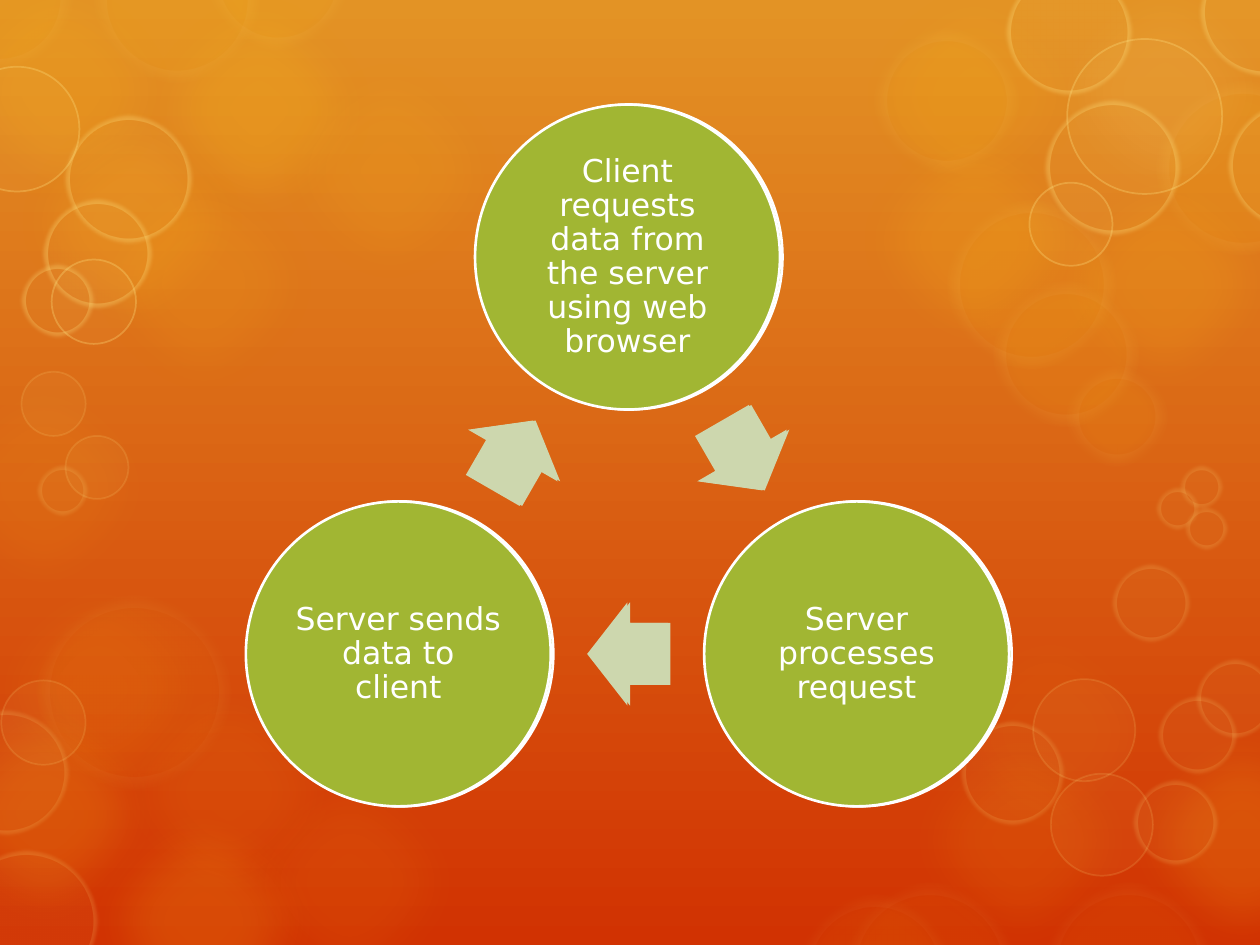
from dataclasses import dataclass
from math import cos, radians, sin

from lxml import etree
from pptx import Presentation
from pptx import util as u
from pptx.dml.color import RGBColor
from pptx.enum import shapes, text
from pptx.oxml import ns

GOLD = RGBColor(0xFD, 0xC6, 0x1B)
PALE = RGBColor(0xFF, 0xE2, 0x81)
CREAM = RGBColor(0xFE, 0xEB, 0xAE)
ORANGE = RGBColor(0xE3, 0x93, 0x25)
RED = RGBColor(0xD1, 0x32, 0x02)
GREEN = RGBColor(0xA1, 0xB6, 0x33)
SAGE = RGBColor(0xCD, 0xD7, 0xAE)
WHITE = RGBColor(0xFF, 0xFF, 0xFF)

FONT = "DejaVu Sans"
WIDTH, HEIGHT = 10, 7.5
GLOW_SIZE = 2.09

CYCLE_CENTERS = (5.0, 4.98)
CYCLE_MIDDLE = 4.14
CYCLE_RADIUS = 2.1
NODE_SIZE = 2.42
ARROW_WIDTH, ARROW_HEIGHT = 0.64, 0.82
STEPS = (
    "Client requests data from the server using web browser",
    "Server processes request",
    "Server sends data to client",
)


@dataclass(frozen=True)
class Bubble:
    left: float
    top: float
    size: float


@dataclass(frozen=True)
class Style:
    fill: RGBColor
    alpha: int
    soft: float = 0
    line: RGBColor | None = None
    width: float = 0
    line_alpha: int = 0


def glow(color: RGBColor, alpha: int) -> Style:
    return Style(color, alpha, 25)


def ring(width: float, line_alpha: int, soft: float = 0) -> Style:
    return Style(PALE, 5, soft, PALE, width, line_alpha)


def glows(*corners: tuple[float, float]) -> list[Bubble]:
    return [Bubble(x, y, GLOW_SIZE) for x, y in corners]


def bubbles(*rows: tuple[float, float, float]) -> list[Bubble]:
    return [Bubble(*row) for row in rows]


BACKDROP = (
    (glow(GOLD, 5), glows((7.29, 4.77))),
    (glow(GOLD, 8), glows((-0.26, 4.42), (0.77, 5.24), (1.73, 5.96), (-0.7, 2.82))),
    (glow(GOLD, 10), glows((0.57, 1.2), (2.05, 0.31), (6.69, -0.29), (7.06, 5.62))),
    (glow(GOLD, 14), glows((-0.56, -0.32))),
    (glow(GOLD, 15), glows((0, 0.72), (8.2, 1.2), (6.69, 0.86))),
    (glow(GOLD, 16), glows((0.57, 6.27), (8.81, 5.62), (-0.69, 5.41))),
    (glow(GOLD, 20), glows((1.01, -0.18))),
    (glow(PALE, 10), glows((8.2, -0.32))),
    (Style(GOLD, 10, 9, CREAM, 14, 6), bubbles(
        (9.18, 0.65, 1.37), (6.94, 0.23, 1.14), (7.52, 1.59, 1.33),
        (7.89, 2.24, 1.14), (8.47, 2.91, 0.79), (0.75, -0.66, 1.31),
        (1.64, -0.74, 1.13), (-0.57, -0.58, 1.14))),
    (Style(GOLD, 6, 9, CREAM, 14, 4), bubbles(
        (0.3, 4.73, 1.53), (6.33, 7.1, 1.23), (6.7, 7.01, 1.36),
        (8.29, 7.01, 1.33))),
    (ring(1, 15), bubbles(
        (0.01, 5.4, 0.67), (8.34, 6.14, 0.81), (8.2, 5.39, 0.81),
        (0.17, 2.95, 0.51), (0.52, 3.46, 0.5))),
    (ring(1, 30), bubbles(
        (-0.36, 0.53, 0.99), (0.41, 2.06, 0.67), (8.47, 0.31, 1.23),
        (8.17, 1.45, 0.66))),
    (ring(5, 15, 2.5), bubbles(
        (-0.35, 6.75, 1.12), (-0.44, 5.64, 0.98), (7.63, 5.73, 0.81),
        (9, 6.2, 0.66), (8.83, 4.48, 0.61), (9.2, 5.53, 0.61),
        (9.5, 5.24, 0.61), (9.37, 3.7, 0.33), (9.18, 3.87, 0.33),
        (9.41, 4.03, 0.33), (0.3, 3.7, 0.39))),
    (ring(5, 30, 2.5), bubbles(
        (0.52, 0.92, 1), (0.35, 1.59, 0.85), (0.17, 2.1, 0.57),
        (7.99, -0.24, 0.99), (9.53, -0.4, 1), (9.75, 0.82, 0.99),
        (8.3, 0.8, 1.06))),
)


def cm(inches: float) -> u.Length:
    return u.Cm(inches * 2.54)


def set_alpha(fill, percent: int) -> None:
    color = fill.find(".//" + ns.qn("a:srgbClr"))
    etree.SubElement(color, ns.qn("a:alpha"), val=str(percent * 1000))


def add_block(parent, kind, x: float, y: float, w: float, h: float, color: RGBColor):
    sp = parent.shapes.add_shape(kind, cm(x), cm(y), cm(w), cm(h))
    sp.shadow.inherit = False
    sp.fill.solid()
    sp.fill.fore_color.rgb = color
    sp.line.fill.background()
    return sp


def add_bubble(s, b: Bubble, style: Style) -> None:
    sp = add_block(s, shapes.MSO_SHAPE.OVAL, b.left, b.top, b.size, b.size, style.fill)
    spPr = sp._element.spPr
    set_alpha(spPr.find(ns.qn("a:solidFill")), style.alpha)
    if style.line is not None:
        sp.line.color.rgb = style.line
        sp.line.width = u.Pt(style.width)
        set_alpha(spPr.find(ns.qn("a:ln")), style.line_alpha)
    if style.soft:
        etree.SubElement(spPr.find(ns.qn("a:effectLst")), ns.qn("a:softEdge"),
                         rad=str(int(u.Pt(style.soft))))


def write(sp, words: str, *, size: float, color: RGBColor, font: str = FONT) -> None:
    tf = sp.text_frame
    tf.word_wrap = True
    tf.vertical_anchor = text.MSO_ANCHOR.MIDDLE
    tf.margin_left = tf.margin_right = tf.margin_top = tf.margin_bottom = cm(0.03)
    p = tf.paragraphs[0]
    p.alignment = text.PP_ALIGN.CENTER
    p.line_spacing = 0.9
    r = p.add_run()
    r.text = words
    r.font.size = u.Pt(size)
    r.font.name = font
    r.font.color.rgb = color


def add_cycle(s, center: float) -> None:
    group = s.shapes.add_group_shape()
    turn = 360 / len(STEPS)
    reach = CYCLE_RADIUS * cos(radians(turn / 2))
    for i, step in enumerate(STEPS):
        a = radians(i * turn - 90)
        node = add_block(group, shapes.MSO_SHAPE.OVAL,
                         center + CYCLE_RADIUS * cos(a) - NODE_SIZE / 2,
                         CYCLE_MIDDLE + CYCLE_RADIUS * sin(a) - NODE_SIZE / 2,
                         NODE_SIZE, NODE_SIZE, GREEN)
        node.line.color.rgb = WHITE
        node.line.width = u.Pt(1.5)
        write(node, step, size=18, color=WHITE)

        a += radians(turn / 2)
        arrow = add_block(group, shapes.MSO_SHAPE.RIGHT_ARROW,
                          center + reach * cos(a) - ARROW_WIDTH / 2,
                          CYCLE_MIDDLE + reach * sin(a) - ARROW_HEIGHT / 2,
                          ARROW_WIDTH, ARROW_HEIGHT, SAGE)
        arrow.adjustments[0] = 0.6
        arrow.adjustments[1] = 0.5
        arrow.rotation = turn / 2 + i * turn


def main() -> None:
    prs = Presentation()
    prs.slide_width, prs.slide_height = cm(WIDTH), cm(HEIGHT)
    s = prs.slides.add_slide(prs.slide_layouts[6])
    fill = s.background.fill
    fill.gradient()
    fill.gradient_angle = 270
    for stop, color in zip(fill.gradient_stops, (ORANGE, RED)):
        stop.color.rgb = color
    for style, group in BACKDROP:
        for b in group:
            add_bubble(s, b, style)
    for center in CYCLE_CENTERS:
        add_cycle(s, center)
    prs.save("out.pptx")


if __name__ == "__main__":
    main()
